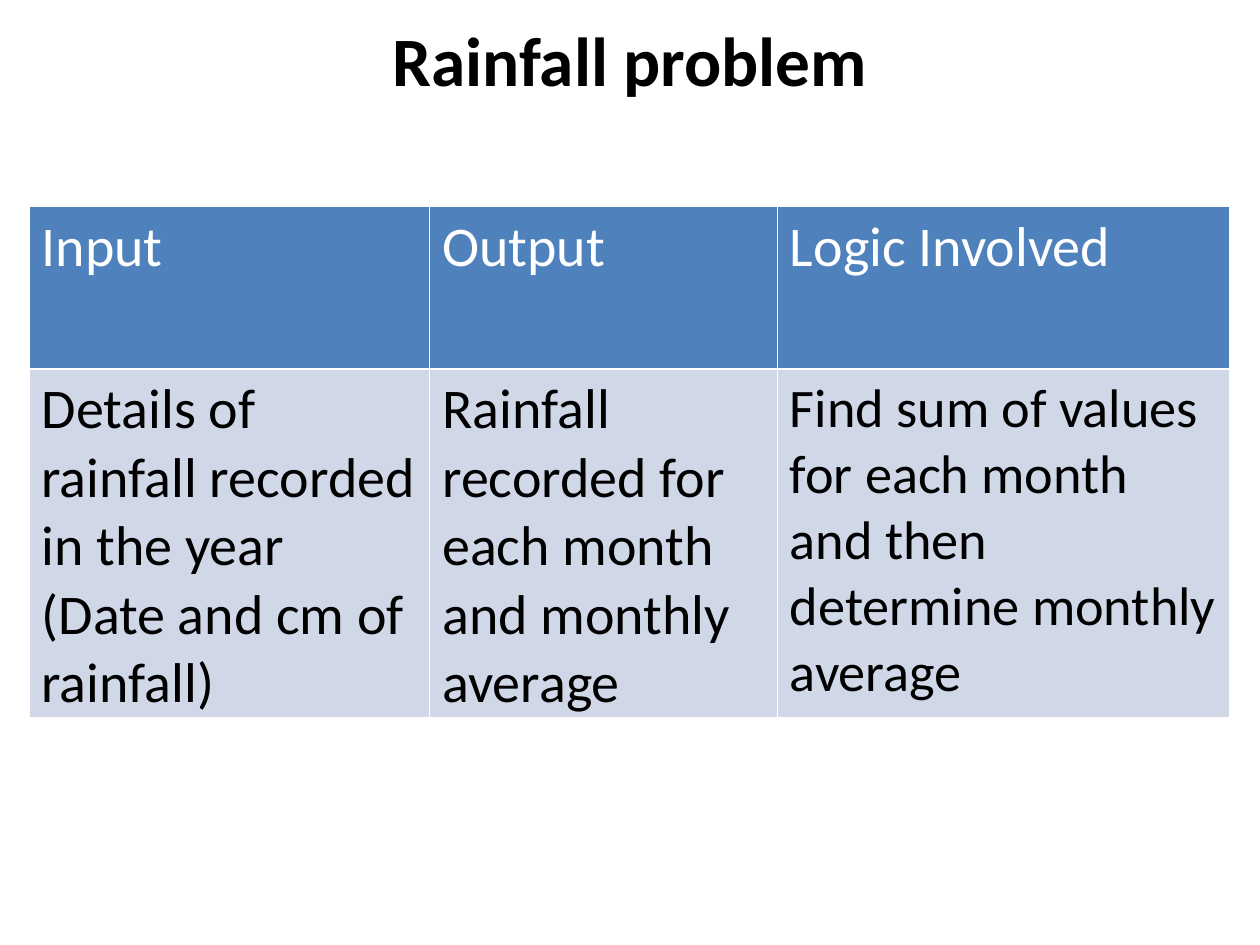
from pptx import Presentation
from pptx.dml.color import RGBColor
from pptx.enum import text
from pptx.oxml import parse_xml
from pptx.oxml.ns import nsdecls
from pptx.util import Inches, Pt

FONT = "Calibri"
HEADERS = ["Input", "Output", "Logic Involved"]
DETAILS = [
    "Details of rainfall recorded in the year (Date and cm of rainfall)",
    "Rainfall recorded for each month and monthly average",
    "Find sum of values for each month and then determine monthly average",
]


def color(value):
    return RGBColor.from_string(value)


def style(p, size, ink, bold=False):
    p.font.name = FONT
    p.font.size = Pt(size)
    p.font.bold = bold
    p.font.color.rgb = color(ink)


def add_title(slide, left, top, width, height):
    sp = slide.shapes.add_textbox(left, top, width, height)
    tf = sp.text_frame
    tf.word_wrap = True
    tf.vertical_anchor = text.MSO_ANCHOR.MIDDLE
    p = tf.paragraphs[0]
    p.text = "Rainfall problem"
    p.alignment = text.PP_ALIGN.CENTER
    style(p, 39.6, "000000", True)


def add_borders(cell, ink, width):
    tc_pr = cell._tc.get_or_add_tcPr()
    for side in "LRTB":
        tc_pr.append(parse_xml(
            f'<a:ln{side} {nsdecls("a")} w="{Pt(width)}"><a:solidFill>'
            f'<a:srgbClr val="{ink}"/></a:solidFill></a:ln{side}>'))


def fill_cell(cell, words, size, ink, fill):
    add_borders(cell, "FFFFFF", 1)
    cell.fill.solid()
    cell.fill.fore_color.rgb = color(fill)
    p = cell.text_frame.paragraphs[0]
    p.text = words
    style(p, size, ink)


def add_rainfall_table(slide, left, top, width, height):
    table = slide.shapes.add_table(2, 3, left, top, width, height).table
    for column, inches in zip(table.columns, [3.18, 2.76, 3.59]):
        column.width = Inches(inches)
    header_height = Inches(1.29)
    table.rows[0].height = header_height
    table.rows[1].height = height - header_height
    for i, (header, detail, size) in enumerate(zip(HEADERS, DETAILS, [32, 32, 31])):
        fill_cell(table.cell(0, i), header, 32, "FFFFFF", "4F81BD")
        fill_cell(table.cell(1, i), detail, size, "000000", "D0D8E8")


def main():
    prs = Presentation()
    prs.slide_width = Inches(10)
    prs.slide_height = Inches(7.5)
    slide = prs.slides.add_slide(prs.slide_layouts[6])
    add_title(slide, Inches(0.5), Inches(0.08), Inches(9), Inches(0.78))
    add_rainfall_table(slide, Inches(0.23), Inches(1.64), Inches(9.53), Inches(4.05))
    prs.save("out.pptx")


if __name__ == "__main__":
    main()
